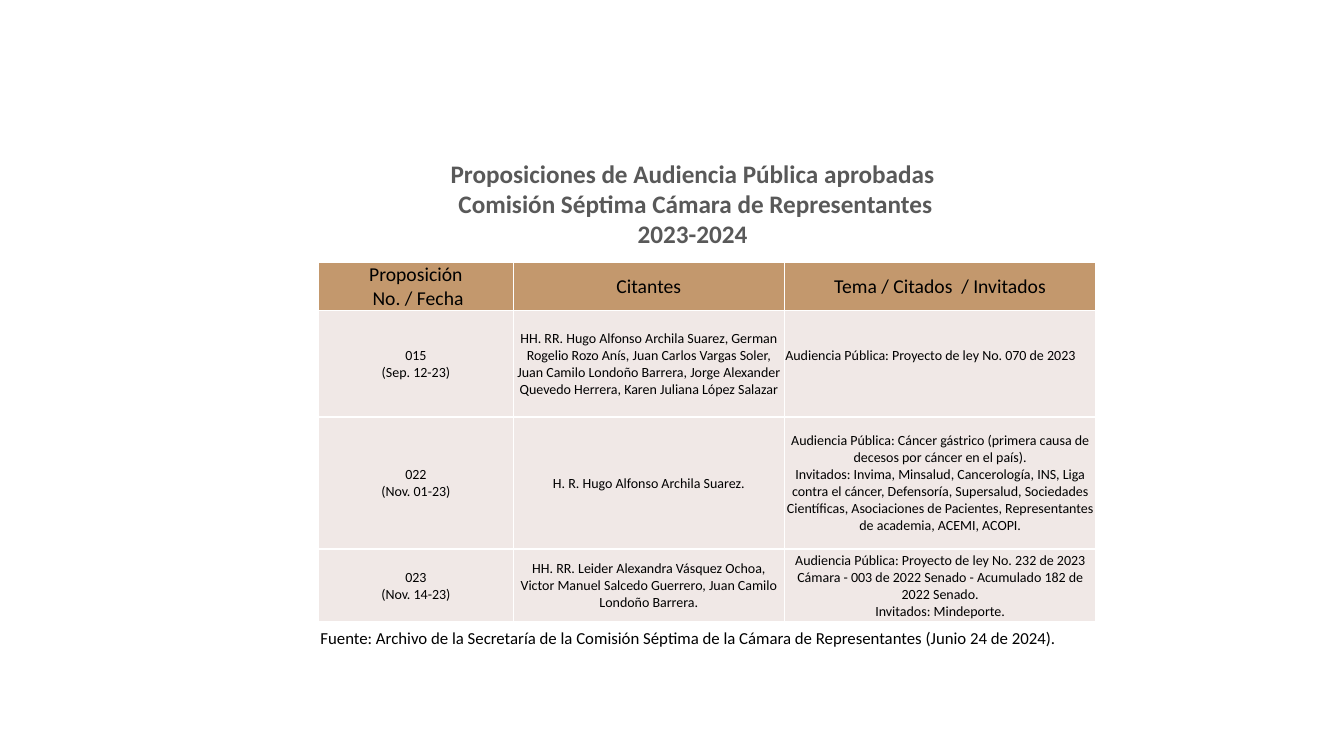
from pptx import Presentation
from pptx.dml.color import RGBColor
from pptx.enum.text import MSO_ANCHOR, PP_ALIGN
from pptx.oxml import parse_xml
from pptx.oxml.ns import nsdecls
from pptx.util import Inches, Pt

MIDDLE = MSO_ANCHOR.MIDDLE
LEFT, CENTER = PP_ALIGN.LEFT, PP_ALIGN.CENTER


def color(code):
    return RGBColor.from_string(code)


def style(par, size, code, bold=False, align=CENTER):
    par.alignment = align
    par.font.name = "Calibri"
    par.font.size = Pt(size)
    par.font.bold = bold
    par.font.color.rgb = color(code)


deck = Presentation()
deck.slide_width = Inches(13.33)
deck.slide_height = Inches(7.5)
slide = deck.slides.add_slide(deck.slide_layouts[6])

title = slide.shapes.add_textbox(Inches(3.54), Inches(1.52), Inches(6.66), Inches(1.01)).text_frame
title.word_wrap = True
title.text = "Proposiciones de Audiencia Pública aprobadas\n Comisión Séptima Cámara de Representantes\n2023-2024"
for par in title.paragraphs:
    style(par, 18, "595959", bold=True)

source = slide.shapes.add_textbox(Inches(3.08), Inches(6.18), Inches(10), Inches(0.3)).text_frame
source.word_wrap = True
source.text = "Fuente: Archivo de la Secretaría de la Comisión Séptima de la Cámara de Representantes (Junio 24 de 2024)."
style(source.paragraphs[0], 12, "000000", align=LEFT)

rows = [
    ("Proposición\v No. / Fecha", "Citantes", "Tema / Citados  / Invitados"),
    ("015\v(Sep. 12-23)",
     "HH. RR. Hugo Alfonso Archila Suarez, German Rogelio Rozo Anís, Juan Carlos Vargas Soler, "
     "Juan Camilo Londoño Barrera, Jorge Alexander Quevedo Herrera, Karen Juliana López Salazar",
     "Audiencia Pública: Proyecto de ley No. 070 de 2023"),
    ("022\v(Nov. 01-23)",
     "H. R. Hugo Alfonso Archila Suarez.",
     "Audiencia Pública: Cáncer gástrico (primera causa de decesos por cáncer en el país).\v"
     "Invitados: Invima, Minsalud, Cancerología, INS, Liga contra el cáncer, Defensoría, Supersalud, "
     "Sociedades Científicas, Asociaciones de Pacientes, Representantes de academia, ACEMI, ACOPI."),
    ("023\v(Nov. 14-23)",
     "HH. RR. Leider Alexandra Vásquez Ochoa, Victor Manuel Salcedo Guerrero, Juan Camilo Londoño Barrera.",
     "Audiencia Pública: Proyecto de ley No. 232 de 2023 Cámara - 003 de 2022 Senado - "
     "Acumulado 182 de 2022 Senado.\vInvitados: Mindeporte."),
]
widths = [1.93, 2.69, 3.09]
heights = [0.47, 1.06, 1.31, 0.72]
table = slide.shapes.add_table(
    len(rows), len(widths), Inches(3.16), Inches(2.6), Inches(sum(widths)), Inches(sum(heights))
).table
for col, width in zip(table.columns, widths):
    col.width = Inches(width)
for row, height in zip(table.rows, heights):
    row.height = Inches(height)

for r, texts in enumerate(rows):
    for c, text in enumerate(texts):
        cell = table.cell(r, c)
        cell.vertical_anchor = MIDDLE
        cell.margin_left = cell.margin_right = cell.margin_top = Inches(0.01)
        cell.margin_bottom = 0
        props = cell._tc.get_or_add_tcPr()
        for side in "LRTB":
            props.append(parse_xml(
                f'<a:ln{side} {nsdecls("a")} w="12700"><a:solidFill>'
                f'<a:srgbClr val="FFFFFF"/></a:solidFill></a:ln{side}>'
            ))
        cell.fill.solid()
        cell.fill.fore_color.rgb = color("F0E8E6" if r else "C3986D")
        par = cell.text_frame.paragraphs[0]
        par.text = text
        style(par, 10 if r else 14, "000000")

topic = table.cell(1, 2)
topic.margin_bottom = Inches(0.17)
topic.text_frame.paragraphs[0].alignment = LEFT

deck.save("out.pptx")
